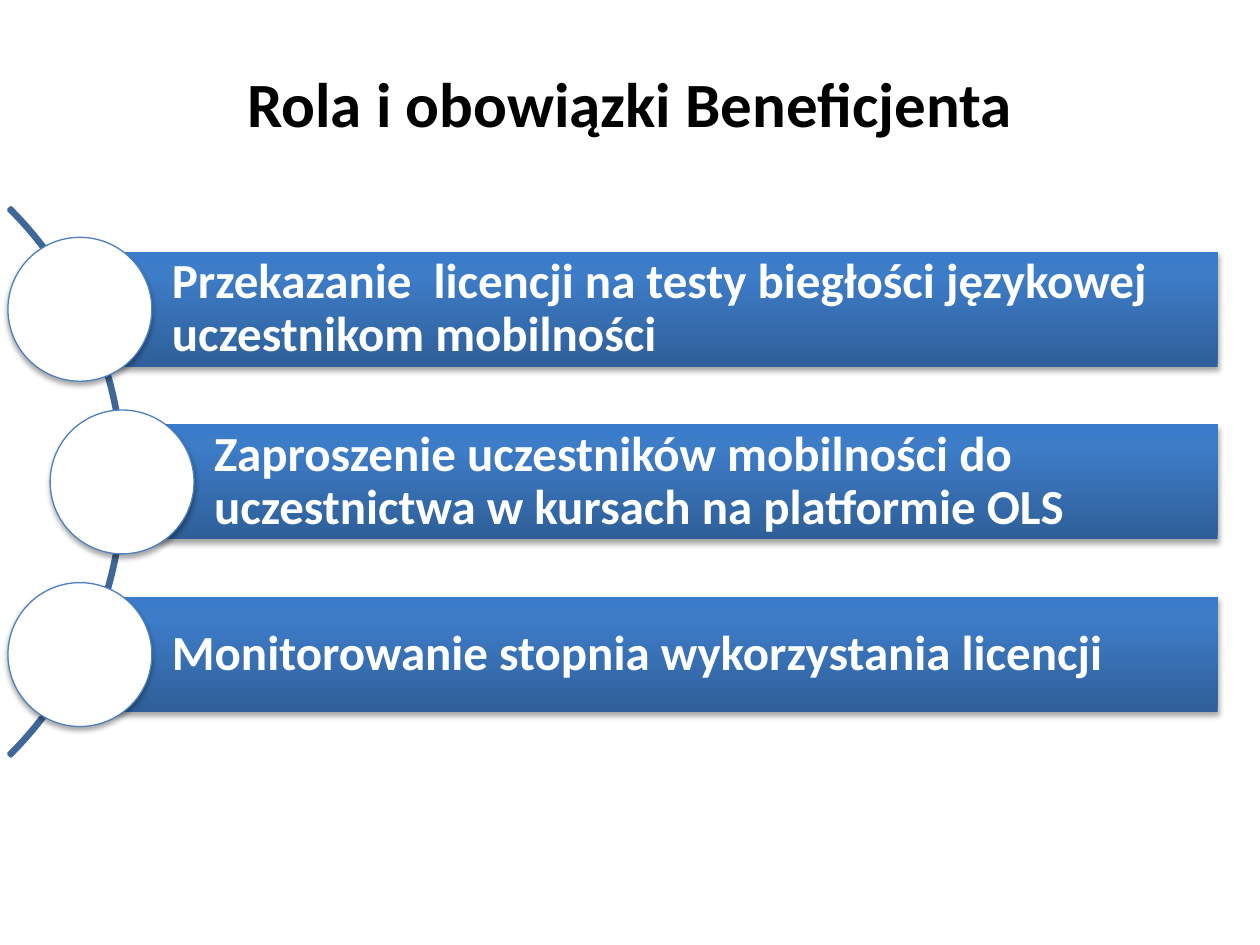
from copy import deepcopy
from math import sqrt

from lxml.etree import SubElement
from pptx import Presentation
from pptx.dml.color import RGBColor
from pptx.enum.shapes import MSO_SHAPE
from pptx.enum.text import MSO_ANCHOR, PP_ALIGN
from pptx.oxml.ns import qn
from pptx.util import Cm, Pt

# Colours, type sizes and line widths
THEME = {
    "font": "Calibri", "title": 36, "body": 28,
    "black": "000000", "white": "FFFFFF",
    "arc": "3F6797", "ring": "4F81BD",
    "fade": [(0, "2F5F99"), (0.8, "3D7CC7"), (1, "3A7CCB")],
    "arc_pt": 2, "ring_pt": 0.75,
}
TITLE = "Rola i obowiązki Beneficjenta"
TASKS = [
    "Przekazanie  licencji na testy biegłości językowej uczestnikom mobilności",
    "Zaproszenie uczestników mobilności do uczestnictwa w kursach na platformie OLS",
    "Monitorowanie stopnia wykorzystania licencji",
]


def shade(name):
    return RGBColor.from_string(THEME.get(name, name))


def apply(item, form):
    for key, value in form.items():
        setattr(item, key, value)


def write(shape, text, size, tint, frame, para):
    body = shape.text_frame
    apply(body, {"word_wrap": True, "vertical_anchor": MSO_ANCHOR.MIDDLE, **frame})
    line = body.paragraphs[0]
    apply(line, para)
    run = line.add_run()
    run.text = text
    apply(run.font, {"name": THEME["font"], "size": Pt(THEME[size]), "bold": True})
    run.font.color.rgb = shade(tint)


def draw(slide, kind, *box):
    shape = slide.shapes.add_shape(kind, *map(Cm, box))
    shape.shadow.inherit = False
    return shape


def stroke(shape, tint, width):
    shape.line.color.rgb = shade(tint)
    shape.line.width = Pt(THEME[width])


def cast(shape):
    """Soft shadow straight below the shape."""
    holder = shape.element.find(".//" + qn("a:effectLst"))
    outer = SubElement(holder, qn("a:outerShdw"), blurRad=str(Pt(3.1)),
                       dist=str(Pt(1.8)), dir="5400000", rotWithShape="0")
    tone = SubElement(outer, qn("a:srgbClr"), val=THEME["black"])
    SubElement(tone, qn("a:alpha"), val="35000")


def fade(shape):
    """Gradient that runs from the bottom edge up."""
    fill = shape.fill
    fill.gradient()
    fill.gradient_angle = 90
    first = shape.element.find(".//" + qn("a:gs"))
    first.addnext(deepcopy(first))
    for stop, (place, tint) in zip(fill.gradient_stops, THEME["fade"]):
        stop.color.rgb = shade(tint)
        stop.position = place


def add_title(slide, x, y, w, h):
    box = slide.shapes.add_textbox(*map(Cm, (x, y, w, h)))
    write(box, TITLE, "title", "black", {}, {"alignment": PP_ALIGN.CENTER})


def add_task(slide, text, x, y, w, h):
    # Bar with its label
    bar = draw(slide, MSO_SHAPE.RECTANGLE, x, y, w, h)
    fade(bar)
    bar.line.fill.background()
    cast(bar)
    pad = Cm(0.2)
    write(bar, text, "body", "white",
          {"margin_left": Cm(0.8 * h), "margin_right": pad,
           "margin_top": pad, "margin_bottom": pad},
          {"alignment": PP_ALIGN.LEFT, "line_spacing": 0.9})

    # Disc centred on the bar's left end
    size = 1.25 * h
    disc = draw(slide, MSO_SHAPE.OVAL, x - size / 2, y + (h - size) / 2, size, size)
    disc.fill.solid()
    disc.fill.fore_color.rgb = shade("white")
    stroke(disc, "ring", "ring_pt")
    cast(disc)


def add_list(slide, x, y, w, h):
    # Quarter arc spanning the full height of the box
    mid = y + h / 2
    rad = h / sqrt(2)
    arc = draw(slide, MSO_SHAPE.BLOCK_ARC, x - h / 2 - rad, mid - rad, 2 * rad, 2 * rad)
    for i, value in enumerate((189, 27, 0.004)):
        arc.adjustments[i] = value
    arc.fill.background()
    stroke(arc, "arc", "arc_pt")

    # Bars, the middle one set further in
    bar = 0.21 * h
    for i, text in enumerate(TASKS):
        inset = 2.24 if i == 1 else 1.39
        top = mid + (i - 1) * 1.5 * bar - bar / 2
        add_task(slide, text, x + inset, top, w - inset, bar)


def main():
    deck = Presentation()
    apply(deck, {"slide_width": Cm(25.4), "slide_height": Cm(19.05)})
    slide = deck.slides.add_slide(deck.slide_layouts[6])
    add_title(slide, 1.75, 0.91, 21.9, 2.31)
    add_list(slide, 0.22, 4.19, 24.33, 11.05)
    deck.save("out.pptx")


if __name__ == "__main__":
    main()
